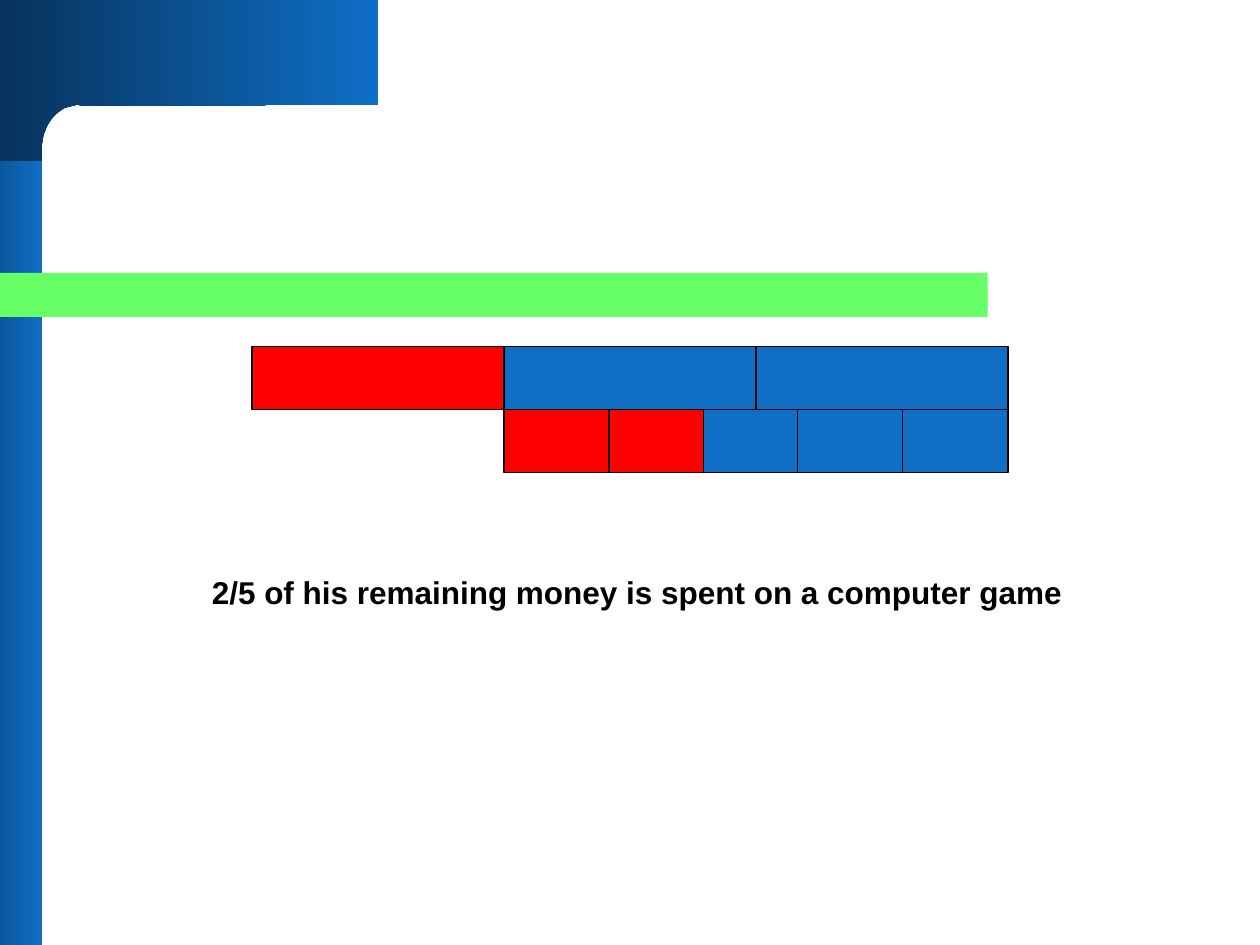
from dataclasses import dataclass

from pptx import Presentation
from pptx.dml.color import RGBColor
from pptx.enum.shapes import MSO_SHAPE
from pptx.enum.text import MSO_AUTO_SIZE
from pptx.util import Cm, Pt

NAVY = RGBColor(0x07, 0x33, 0x5C)
BLUE = RGBColor(0x0F, 0x6F, 0xC6)
GREEN = RGBColor(0x66, 0xFF, 0x66)
RED = RGBColor(0xFF, 0x00, 0x00)
BLACK = RGBColor(0x00, 0x00, 0x00)

PAGE_WIDTH, PAGE_HEIGHT = 25.4, 19.05
CELL_HEIGHT = 1.27
CURVE_STEPS = 8
CORNER_START = (7.62, 0)
CORNER_EDGE = [(7.62, 2.11), (1.68, 2.13), (1.55, 2.11), (1.35, 2.16)]
CORNER_CURVES = [
    [(1.35, 2.16), (1.27, 2.18), (1.17, 2.26), (1.09, 2.34)],
    [(1.09, 2.34), (1.02, 2.41), (0.94, 2.54), (0.91, 2.64)],
    [(0.91, 2.64), (0.86, 2.74), (0.86, 2.84), (0.84, 2.95)],
]
CORNER_END = [(0.84, 3.25), (0, 3.25), (0, 0)]
CAPTION_FORMAT = {"name": "Arial", "size": Pt(18), "bold": True}


@dataclass
class BarRow:
    left: float
    top: float
    widths: list[float]
    colours: list[RGBColor]


BAR_ROWS = [
    BarRow(5.08, 6.98, [5.08] * 3, [RED, BLUE, BLUE]),
    BarRow(10.16, 6.98 + CELL_HEIGHT, [2.12, 1.9, 1.9, 2.12, 2.12],
           [RED, RED, BLUE, BLUE, BLUE]),
]


def add_block(page, kind, left: float, top: float, width: float, height: float,
              colour: RGBColor):
    block = page.shapes.add_shape(kind, Cm(left), Cm(top), Cm(width), Cm(height))
    block.shadow.inherit = False
    block.fill.solid()
    block.fill.fore_color.rgb = colour
    block.line.fill.background()
    return block


def shade(shape) -> None:
    shape.shadow.inherit = False
    shape.line.fill.background()
    shape.fill.gradient()
    shape.fill.gradient_angle = 0
    for stop, colour in zip(shape.fill.gradient_stops, (NAVY, BLUE)):
        stop.color.rgb = colour


def curve_points(controls: list) -> list:
    points = []
    for step in range(1, CURVE_STEPS + 1):
        t = step / CURVE_STEPS
        weights = ((1 - t) ** 3, 3 * t * (1 - t) ** 2, 3 * t ** 2 * (1 - t), t ** 3)
        points.append(tuple(sum(w * control[axis] for w, control in zip(weights, controls))
                            for axis in (0, 1)))
    return points


def draw_corner(page) -> None:
    outline = list(CORNER_EDGE)
    for controls in CORNER_CURVES:
        outline += curve_points(controls)
    outline += CORNER_END
    builder = page.shapes.build_freeform(*map(Cm, CORNER_START))
    builder.add_line_segments([(Cm(x), Cm(y)) for x, y in outline], close=True)
    shade(builder.convert_to_shape())


def draw_decoration(page) -> None:
    shade(add_block(page, MSO_SHAPE.RECTANGLE, -1.27, 0, 2.11, PAGE_HEIGHT, BLUE))
    draw_corner(page)
    add_block(page, MSO_SHAPE.RECTANGLE, 0.43, 5.5, 19.48, 0.89, GREEN)
    cap = add_block(page, MSO_SHAPE.FLOWCHART_DELAY, -0.64, 5.5, 1.09, 0.89, GREEN)
    cap.element.spPr.xfrm.set("flipH", "1")


def draw_row(page, row: BarRow) -> None:
    left = row.left
    for width, colour in zip(row.widths, row.colours):
        cell = add_block(page, MSO_SHAPE.RECTANGLE, left, row.top, width, CELL_HEIGHT, colour)
        cell.line.color.rgb = BLACK
        cell.line.width = Pt(0.75)
        left += width


def draw_caption(page, text: str) -> None:
    box = page.shapes.add_textbox(Cm(4.02), Cm(11.43), Cm(17.83), Cm(1.02))
    box.text_frame.word_wrap = False
    box.text_frame.auto_size = MSO_AUTO_SIZE.SHAPE_TO_FIT_TEXT
    span = box.text_frame.paragraphs[0].add_run()
    span.text = text
    for name, value in CAPTION_FORMAT.items():
        setattr(span.font, name, value)
    span.font.color.rgb = BLACK


def main() -> None:
    deck = Presentation()
    deck.slide_width, deck.slide_height = Cm(PAGE_WIDTH), Cm(PAGE_HEIGHT)
    page = deck.slides.add_slide(deck.slide_layouts[6])
    draw_decoration(page)
    for row in BAR_ROWS:
        draw_row(page, row)
    draw_caption(page, "2/5 of his remaining money is spent on a computer game")
    deck.save("out.pptx")


if __name__ == "__main__":
    main()
